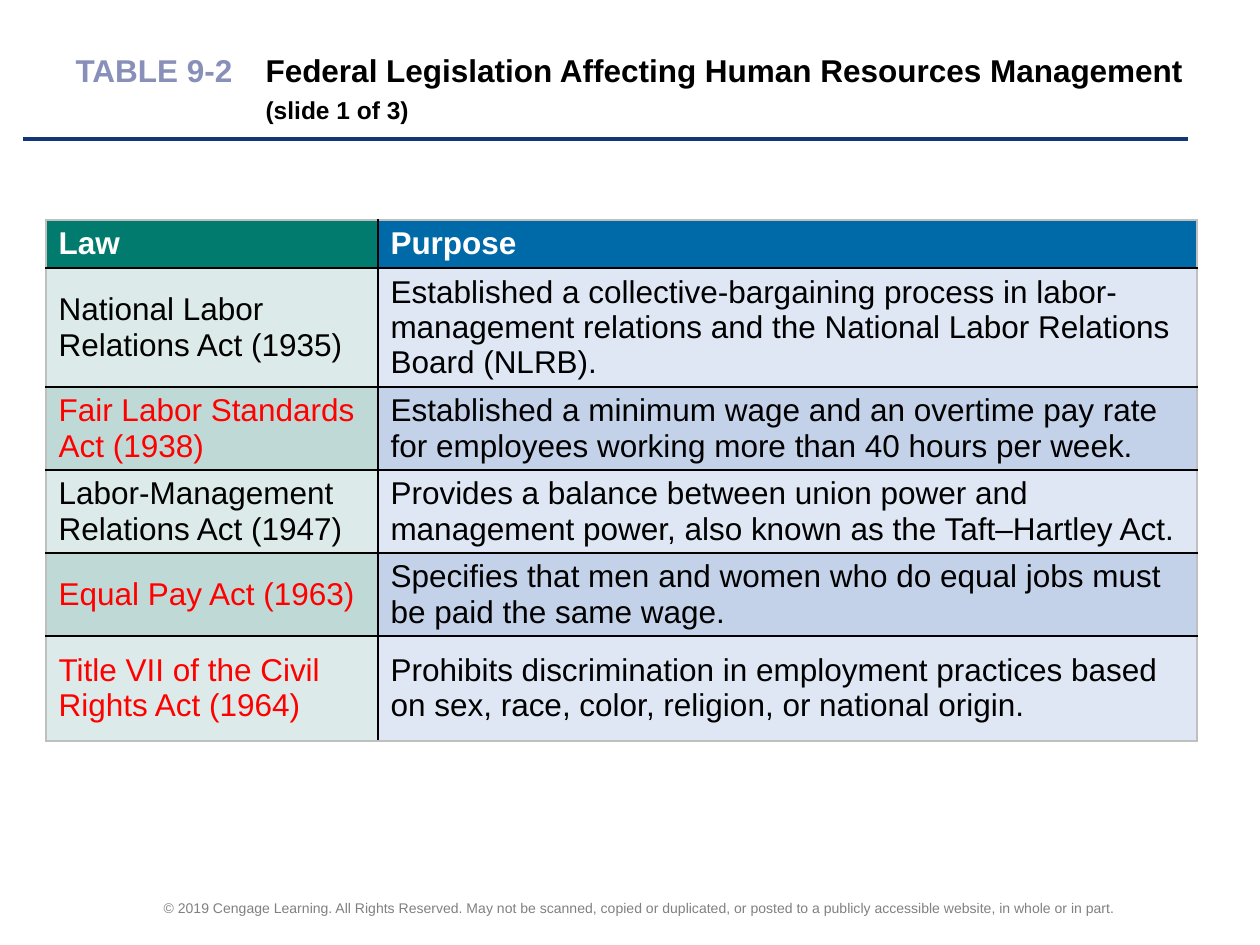
from lxml.etree import SubElement
from pptx import Presentation
from pptx.dml.color import RGBColor
from pptx.enum.shapes import MSO_CONNECTOR
from pptx.enum.text import MSO_ANCHOR, PP_ALIGN
from pptx.oxml import parse_xml
from pptx.oxml.ns import nsdecls, qn
from pptx.util import Emu, Pt

PX_PER_INCH = 126
BLACK, WHITE, RED = "000000", "FFFFFF", "FF0000"
OUTER_BORDER = "BFBFBF"
HEADERS = [("Law", "007B6D"), ("Purpose", "006AA9")]
BANDS = [("DCEBE9", "DEE7F3"), ("BFDAD6", "C3D2E9")]
COLUMN_WIDTHS = [332, 819]
ROW_HEIGHTS = [48, 119, 83, 83, 83, 105]
LAWS = [
    ("National Labor Relations Act (1935)", BLACK,
     "Established a collective-bargaining process in labor-management relations "
     "and the National Labor Relations Board (NLRB)."),
    ("Fair Labor Standards Act (1938)", RED,
     "Established a minimum wage and an overtime pay rate for employees working "
     "more than 40 hours per week."),
    ("Labor-Management Relations Act (1947)", BLACK,
     "Provides a balance between union power and management power, also known as "
     "the Taft–Hartley Act."),
    ("Equal Pay Act (1963)", RED,
     "Specifies that men and women who do equal jobs must be paid the same wage."),
    ("Title VII of the Civil Rights Act (1964)", RED,
     "Prohibits discrimination in employment practices based on sex, race, color, "
     "religion, or national origin."),
]
COPYRIGHT = (
    "© 2019 Cengage Learning. All Rights Reserved. May not be scanned, copied or "
    "duplicated, or posted to a publicly accessible website, in whole or in part."
)


def px(length):
    return Emu(round(length * 914400 / PX_PER_INCH))


def rgb(value):
    return RGBColor.from_string(value)


def write(paragraph, text, size=18, color=BLACK, bold=False, font="Arial"):
    run = paragraph.add_run()
    run.text = text
    run.font.name = font
    run.font.size = Pt(size)
    run.font.bold = bold
    run.font.color.rgb = rgb(color)


def set_borders(cell, colors):
    """Add 1 pt borders; colors are given left, right, top, bottom."""
    properties = cell._tc.get_or_add_tcPr()
    for position, (side, color) in enumerate(zip("LRTB", colors)):
        border = parse_xml(
            f'<a:ln{side} {nsdecls("a")} w="12700"><a:solidFill>'
            f'<a:srgbClr val="{color}"/></a:solidFill></a:ln{side}>'
        )
        properties.insert(position, border)


class SlideBuilder:
    def __init__(self, slide):
        self.slide = slide
        self.rule_color = "133676"
        self.label_color = "888FB8"
        self.footer_color = "808080"
        self.cell_margin = 2

    def title(self, label, heading, part, box, tab):
        title = self.slide.shapes.title
        title.left, title.top, title.width, title.height = map(px, box)
        title.text_frame.vertical_anchor = MSO_ANCHOR.MIDDLE
        line = title.text_frame.paragraphs[0]
        line.alignment = PP_ALIGN.LEFT
        tabs = SubElement(line._p.get_or_add_pPr(), qn("a:tabLst"))
        SubElement(tabs, qn("a:tab"), pos=str(px(tab)), algn="l")
        write(line, label, color=self.label_color, bold=True)
        # The second tab wraps, placing the part under the heading.
        write(line, f"\t{heading} \t", bold=True)
        write(line, part, size=14, bold=True)

    def rule(self, left, right, y):
        rule = self.slide.shapes.add_connector(
            MSO_CONNECTOR.STRAIGHT, px(left), px(y), px(right), px(y))
        rule.line.color.rgb = rgb(self.rule_color)
        rule.line.width = Pt(2.25)
        SubElement(rule._element.spPr, qn("a:effectLst"))

    def footer(self, text, box):
        frame = self.slide.shapes.add_textbox(*map(px, box)).text_frame
        frame.word_wrap = True
        frame.vertical_anchor = MSO_ANCHOR.MIDDLE
        line = frame.paragraphs[0]
        line.alignment = PP_ALIGN.CENTER
        write(line, text, size=8, color=self.footer_color)

    def cell(self, table, row, column, text, fill, **style):
        cell = table.cell(row, column)
        cell.vertical_anchor = MSO_ANCHOR.MIDDLE
        cell.margin_top = cell.margin_bottom = px(self.cell_margin)
        cell.fill.solid()
        cell.fill.fore_color.rgb = rgb(fill)
        write(cell.text_frame.paragraphs[0], text, **style)
        on_edge = (column == 0, column == len(COLUMN_WIDTHS) - 1,
                   row == 0, row == len(ROW_HEIGHTS) - 1)
        set_borders(cell, [OUTER_BORDER if edge else BLACK for edge in on_edge])

    def law_table(self, left, top):
        table = self.slide.shapes.add_table(
            len(ROW_HEIGHTS), len(COLUMN_WIDTHS), px(left), px(top),
            px(sum(COLUMN_WIDTHS)), px(sum(ROW_HEIGHTS))).table
        table.horz_banding = False
        for column, width in zip(table.columns, COLUMN_WIDTHS):
            column.width = px(width)
        for row, height in zip(table.rows, ROW_HEIGHTS):
            row.height = px(height)
        for column, (header, fill) in enumerate(HEADERS):
            self.cell(table, 0, column, header, fill, color=WHITE, bold=True)
        for row, (law, law_color, purpose) in enumerate(LAWS, start=1):
            law_fill, purpose_fill = BANDS[(row - 1) % 2]
            self.cell(table, row, 0, law, law_fill, color=law_color)
            self.cell(table, row, 1, purpose, purpose_fill)


def main():
    deck = Presentation()
    deck.slide_width, deck.slide_height = px(1260), px(945)
    builder = SlideBuilder(deck.slides.add_slide(deck.slide_layouts[5]))
    builder.footer(COPYRIGHT, (94, 892, 1092, 32))
    builder.rule(23, 1188, 139)
    builder.title("TABLE 9-2",
                  "Federal Legislation Affecting Human Resources Management",
                  "(slide 1 of 3)", box=(63, 41, 1134, 95), tab=190)
    builder.law_table(46, 220)
    deck.save("out.pptx")


if __name__ == "__main__":
    main()
